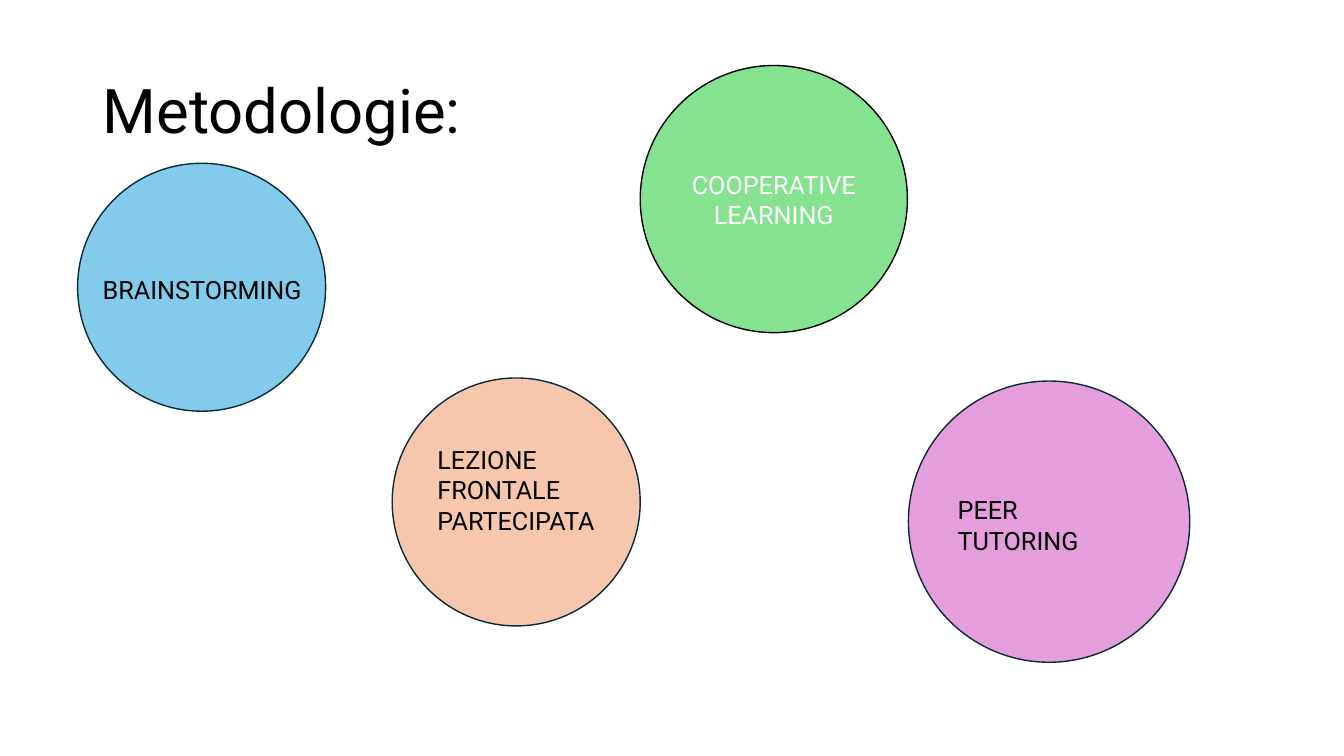
from dataclasses import dataclass
from typing import Optional

from pptx import Presentation
from pptx.dml.color import RGBColor
from pptx.enum import shapes, text
from pptx.util import Inches, Pt


@dataclass(frozen=True)
class Theme:
    font: str = "Roboto"
    title_size: int = 44
    label_size: int = 18
    line_width: int = 1
    black: str = "000000"
    white: str = "FFFFFF"
    navy: str = "092A39"
    blue: str = "83CBEB"
    peach: str = "F6C6AD"
    green: str = "84E291"
    pink: str = "E59EDD"


@dataclass(frozen=True)
class Box:
    left: float
    top: float
    width: float
    height: float

    def lengths(self) -> tuple:
        return tuple(map(Inches, (self.left, self.top, self.width, self.height)))


@dataclass(frozen=True)
class Method:
    """A circle; its label sits inside it unless label_box is given."""
    label: str
    left: float
    top: float
    diameter: float
    fill: str
    outline: str
    label_box: Optional[Box] = None


THEME = Theme()
METHODS = (
    Method("BRAINSTORMING", 0.77, 1.62, 2.46, THEME.blue, THEME.navy,
           Box(0.92, 2.67, 2.34, 0.4)),
    Method("LEZIONE FRONTALE PARTECIPATA", 3.89, 3.75, 2.46, THEME.peach, THEME.navy,
           Box(4.24, 4.36, 2, 1.01)),
    Method("COOPERATIVE LEARNING", 6.35, 0.65, 2.65, THEME.green, THEME.black),
    Method("PEER TUTORING", 9.01, 3.78, 2.79, THEME.pink, THEME.navy,
           Box(9.4, 4.86, 2, 0.4)),
)


def write(shape, content: str, *, size: int = THEME.label_size, color: str = THEME.black,
          align=text.PP_ALIGN.LEFT, anchor=text.MSO_ANCHOR.TOP,
          line_spacing: float = 1.0) -> None:
    frame = shape.text_frame
    frame.word_wrap = True
    frame.vertical_anchor = anchor
    paragraph = frame.paragraphs[0]
    paragraph.alignment = align
    paragraph.line_spacing = line_spacing
    run = paragraph.add_run()
    run.text = content
    run.font.name = THEME.font
    run.font.size = Pt(size)
    run.font.color.rgb = RGBColor.from_string(color)


def draw_method(slide, method: Method) -> None:
    bounds = Box(method.left, method.top, method.diameter, method.diameter)
    circle = slide.shapes.add_shape(shapes.MSO_SHAPE.OVAL, *bounds.lengths())
    circle.shadow.inherit = False
    circle.fill.solid()
    circle.fill.fore_color.rgb = RGBColor.from_string(method.fill)
    circle.line.color.rgb = RGBColor.from_string(method.outline)
    circle.line.width = Pt(THEME.line_width)
    if method.label_box:
        write(slide.shapes.add_textbox(*method.label_box.lengths()), method.label)
    else:
        write(circle, method.label, color=THEME.white,
              align=text.PP_ALIGN.CENTER, anchor=text.MSO_ANCHOR.MIDDLE)


def main() -> None:
    deck = Presentation()
    deck.slide_width, deck.slide_height = Inches(13.33), Inches(7.5)
    slide = deck.slides.add_slide(deck.slide_layouts[6])

    # Heading
    heading = slide.shapes.add_textbox(*Box(0.92, 0.4, 11.5, 1.45).lengths())
    write(heading, "Metodologie:", size=THEME.title_size,
          anchor=text.MSO_ANCHOR.MIDDLE, line_spacing=0.9)

    # Teaching methods
    for method in METHODS:
        draw_method(slide, method)

    deck.save("out.pptx")


if __name__ == "__main__":
    main()
